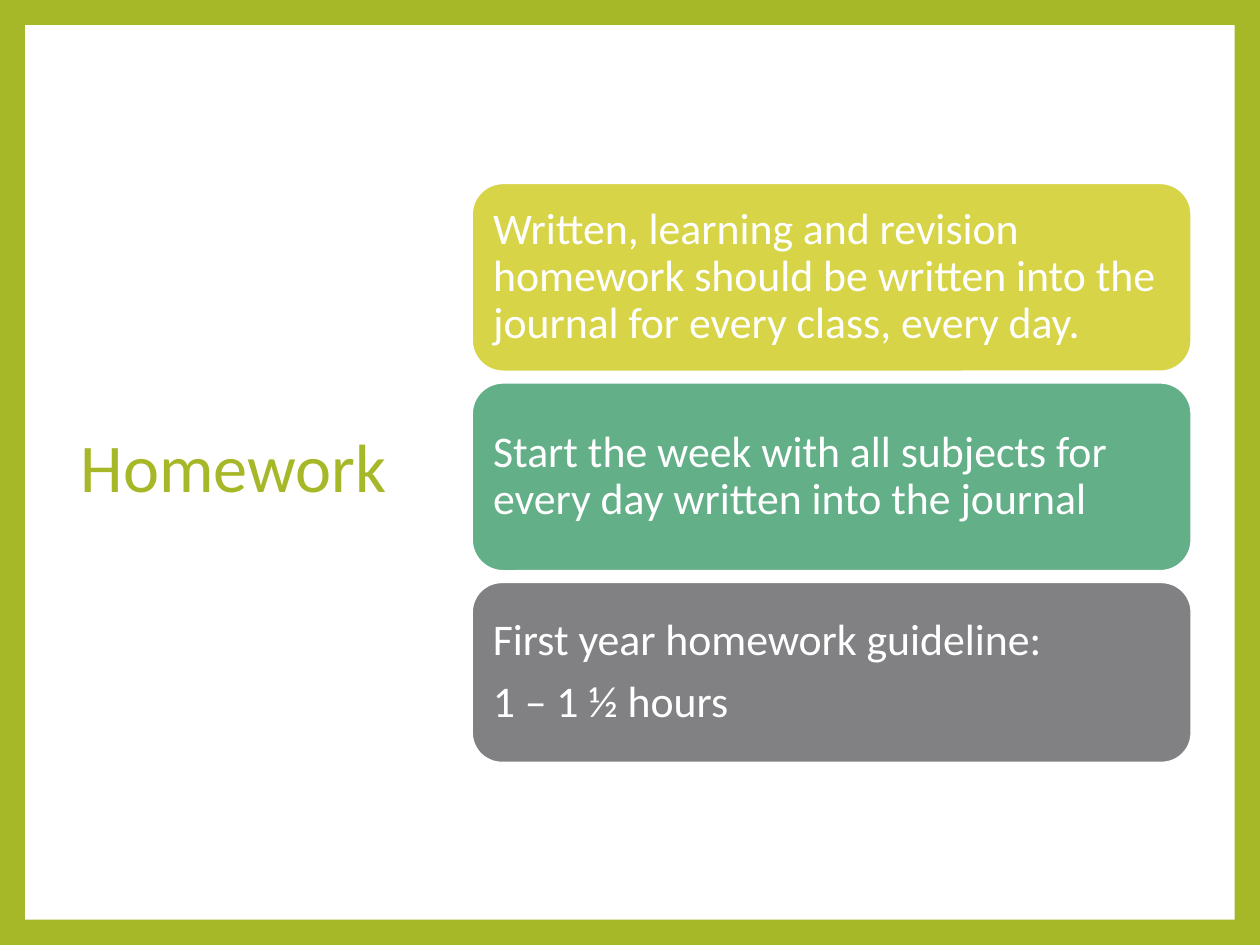
from pptx import Presentation
from pptx.dml.color import RGBColor
from pptx.enum.shapes import MSO_SHAPE
from pptx.enum.text import MSO_ANCHOR, PP_ALIGN
from pptx.util import Pt

RECT = MSO_SHAPE.RECTANGLE
ROUND_RECT = MSO_SHAPE.ROUNDED_RECTANGLE
MIDDLE = MSO_ANCHOR.MIDDLE
LEFT = PP_ALIGN.LEFT

LIME = "A6B727"
WHITE = "FFFFFF"
CARDS = [
    ("D7D447", 108, ["Written, learning and revision homework should be written "
                     "into the journal for every class, every day."]),
    ("62AF88", 108, ["Start the week with all subjects for every day written "
                     "into the journal"]),
    ("818183", 103.5, ["First year homework guideline:", "1 – 1 ½ hours"]),
]


def rgb(value):
    return RGBColor.from_string(value)


def add_text(p, text, size, color, font, space_after=0):
    p.alignment = LEFT
    p.line_spacing = 0.9
    p.space_after = Pt(space_after)
    r = p.add_run()
    r.text = text
    r.font.name = font
    r.font.size = Pt(size)
    r.font.color.rgb = rgb(color)


class Deck:
    font = "Calibri"

    def __init__(self, width, height):
        self.prs = Presentation()
        self.prs.slide_width = Pt(width)
        self.prs.slide_height = Pt(height)

    def slide(self, color):
        self.s = self.prs.slides.add_slide(self.prs.slide_layouts[6])
        self.s.background.fill.solid()
        self.s.background.fill.fore_color.rgb = rgb(color)

    def shape(self, kind, box, fill, line=None):
        sp = self.s.shapes.add_shape(kind, *map(Pt, box))
        sp.shadow.inherit = False
        sp.fill.solid()
        sp.fill.fore_color.rgb = rgb(fill)
        if line:
            sp.line.color.rgb = rgb(line)
            sp.line.width = Pt(1.5)
        else:
            sp.line.fill.background()
        return sp

    def fill_text(self, sp, paragraphs, **fmt):
        tf = sp.text_frame
        tf.word_wrap = True
        tf.vertical_anchor = MIDDLE
        for i, text in enumerate(paragraphs):
            p = tf.add_paragraph() if i else tf.paragraphs[0]
            add_text(p, text, font=self.font, **fmt)

    def title(self, box, text):
        sp = self.s.shapes.add_textbox(*map(Pt, box))
        self.fill_text(sp, [text], size=39, color=LIME)

    def card(self, box, fill, paragraphs):
        sp = self.shape(ROUND_RECT, box, fill, WHITE)
        tf = sp.text_frame
        tf.margin_left = tf.margin_right = Pt(7.2)
        tf.margin_top = tf.margin_bottom = Pt(7.2)
        self.fill_text(sp, paragraphs, size=25, color=WHITE, space_after=8.5)


def main():
    deck = Deck(720, 540)
    deck.slide(LIME)
    deck.shape(RECT, (14.4, 14.4, 691.2, 511.2), WHITE)
    deck.title((39, 48, 199, 441.5), "Homework")
    top, gap = 104.5, 6
    for fill, height, paragraphs in CARDS:
        deck.card((269.5, top, 411.5, height), fill, paragraphs)
        top += height + gap
    deck.prs.save("out.pptx")


if __name__ == "__main__":
    main()
